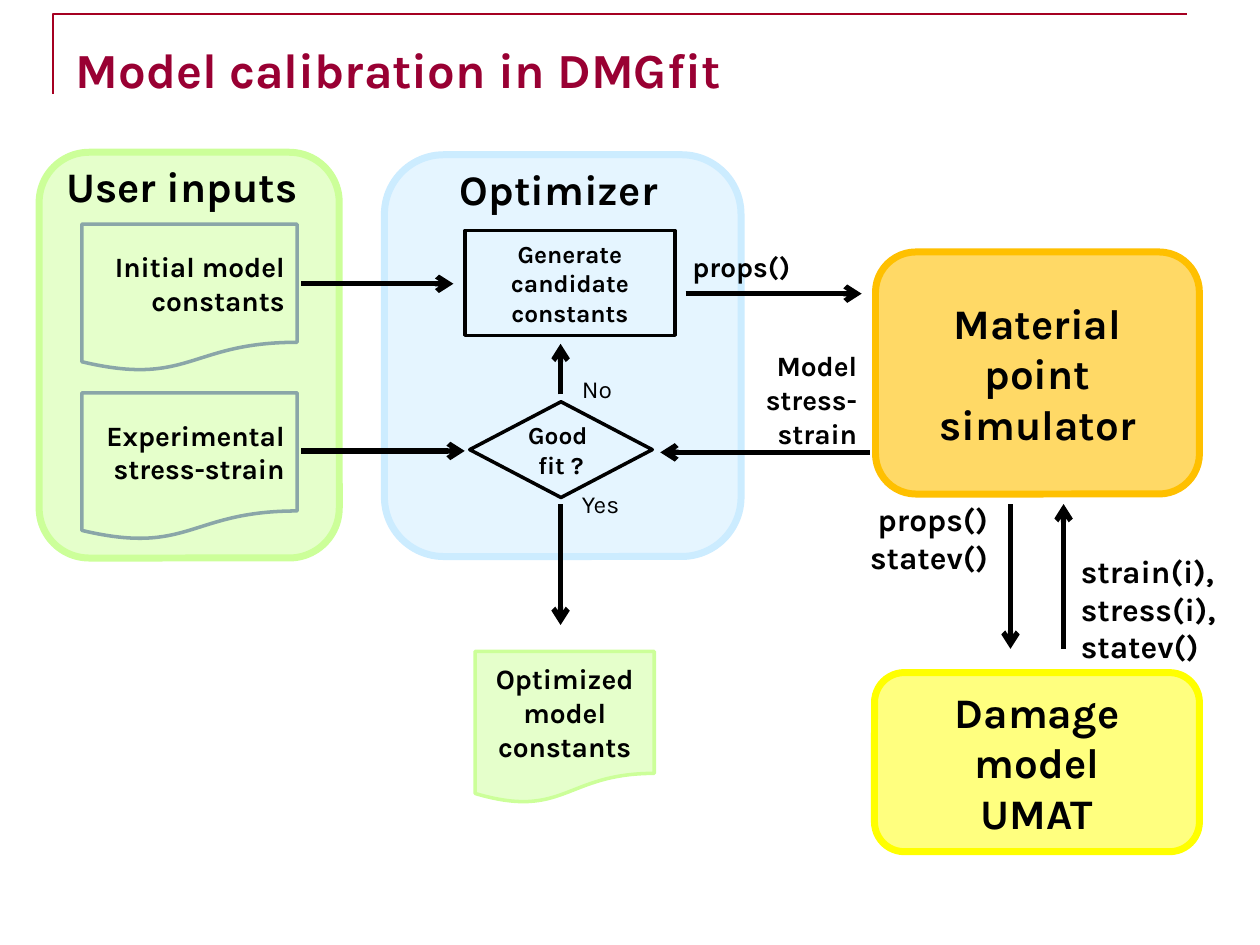
from dataclasses import dataclass

from lxml import etree
from pptx import Presentation
from pptx import util as u
from pptx.dml import color
from pptx.enum import shapes, text
from pptx.oxml import ns

FONT = "Karla"
BLACK = "000000"
GREEN = "CCFF99"
BLUE = "CCECFF"
YELLOW = "FFFF00"
ORANGE = "FFC000"
GRAY = "8AA6A8"
LEFT, CENTER, RIGHT = text.PP_ALIGN.LEFT, text.PP_ALIGN.CENTER, text.PP_ALIGN.RIGHT
Kind = shapes.MSO_SHAPE


@dataclass
class Node:
    kind: Kind
    left: float
    top: float
    width: float
    height: float
    line: str
    line_width: float
    lines: tuple[str, ...] = ()
    size: int = 16
    align: text.PP_ALIGN = CENTER
    fill: str = ""
    opacity: int = 50


@dataclass
class Label:
    left: float
    top: float
    width: float
    height: float
    lines: tuple[str, ...]
    size: int
    align: text.PP_ALIGN = LEFT
    bold: bool = True
    wrap: bool = True


@dataclass
class Arrow:
    start: tuple[float, float]
    end: tuple[float, float]


NODES = [
    Node(Kind.ROUNDED_RECTANGLE, 0.79, 3.07, 6.05, 8.18, GREEN, 4, fill=GREEN),
    Node(Kind.ROUNDED_RECTANGLE, 7.75, 3.12, 7.19, 8.1, BLUE, 4, fill=BLUE),
    Node(Kind.FLOWCHART_DOCUMENT, 9.58, 13.13, 3.61, 3.07, GREEN, 2,
         ("Optimized", "model constants"), fill=GREEN),
    Node(Kind.FLOWCHART_DECISION, 9.47, 8.1, 3.68, 1.93, BLACK, 2,
         ("Good ", "fit ?"), 14),
    Node(Kind.FLOWCHART_PROCESS, 9.37, 4.65, 4.24, 2.11, BLACK, 2,
         ("Generate candidate constants",), 14),
    Node(Kind.ROUNDED_RECTANGLE, 17.63, 13.56, 6.55, 3.61, YELLOW, 4,
         ("Damage model", "UMAT"), 24, fill=YELLOW),
    Node(Kind.ROUNDED_RECTANGLE, 17.65, 5.08, 6.53, 4.88, ORANGE, 4,
         ("Material point simulator",), 24, fill=ORANGE, opacity=60),
    Node(Kind.FLOWCHART_DOCUMENT, 1.65, 7.92, 4.34, 2.97, GRAY, 2,
         ("Experimental stress-strain",), align=RIGHT),
    Node(Kind.FLOWCHART_DOCUMENT, 1.65, 4.52, 4.34, 2.97, GRAY, 2,
         ("Initial model constants",), align=RIGHT),
]

LABELS = [
    Label(1.09, 3.12, 5.41, 1.27, ("User inputs",), 24, wrap=False),
    Label(9.02, 3.18, 4.72, 1.27, ("Optimizer",), 24, wrap=False),
    Label(11.48, 9.73, 1.27, 0.86, ("Yes",), 14, bold=False, wrap=False),
    Label(11.48, 7.42, 1.14, 0.84, ("No",), 14, bold=False, wrap=False),
    Label(21.54, 11, 3.53, 2.57, ("strain(i), stress(i),", "statev()"), 18),
    Label(16.99, 9.96, 3.18, 1.8, ("props()", "statev()"), 18, RIGHT),
    Label(14.81, 6.91, 2.72, 2.39, ("Model stress-", "strain"), 16, RIGHT),
    Label(13.41, 4.9, 2.77, 0.94, ("props()",), 16, RIGHT),
]

ARROWS = [
    Arrow((11.3, 10.16), (11.3, 12.6)),
    Arrow((11.3, 7.95), (11.3, 6.93)),
    Arrow((21.44, 13.08), (21.44, 10.16)),
    Arrow((20.37, 10.16), (20.37, 13.08)),
    Arrow((17.53, 9.12), (13.31, 9.12)),
    Arrow((13.82, 5.92), (17.37, 5.92)),
    Arrow((6.07, 5.72), (9.14, 5.72)),
    Arrow((6.07, 9.09), (9.37, 9.09)),
]


def set_color(target, value: str) -> None:
    target.rgb = color.RGBColor.from_string(value)


def set_line(line, value: str, width: float) -> None:
    set_color(line.color, value)
    line.width = u.Pt(width)


def write_lines(frame, lines: tuple[str, ...], size: int, align: text.PP_ALIGN,
                bold: bool = True, ink: str = BLACK) -> None:
    for index, line in enumerate(lines):
        paragraph = frame.add_paragraph() if index else frame.paragraphs[0]
        paragraph.alignment = align
        run = paragraph.add_run()
        run.text = line
        run.font.name = FONT
        run.font.size = u.Pt(size)
        run.font.bold = bold
        set_color(run.font.color, ink)


def draw_node(slide, node: Node) -> None:
    shape = slide.shapes.add_shape(node.kind, u.Cm(node.left), u.Cm(node.top),
                                   u.Cm(node.width), u.Cm(node.height))
    shape.shadow.inherit = False
    set_line(shape.line, node.line, node.line_width)
    if node.fill:
        shape.fill.solid()
        set_color(shape.fill.fore_color, node.fill)
        rgb = shape.fill._xPr.find(".//" + ns.qn("a:srgbClr"))
        etree.SubElement(rgb, ns.qn("a:alpha"), val=str(node.opacity * 1000))
    else:
        shape.fill.background()
    shape.text_frame.word_wrap = True
    shape.text_frame.vertical_anchor = text.MSO_ANCHOR.MIDDLE
    write_lines(shape.text_frame, node.lines, node.size, node.align)


def draw_label(slide, label: Label) -> None:
    shape = slide.shapes.add_textbox(u.Cm(label.left), u.Cm(label.top),
                                     u.Cm(label.width), u.Cm(label.height))
    shape.text_frame.word_wrap = label.wrap
    shape.text_frame.auto_size = text.MSO_AUTO_SIZE.SHAPE_TO_FIT_TEXT
    write_lines(shape.text_frame, label.lines, label.size, label.align, label.bold)


def draw_arrow(slide, arrow: Arrow) -> None:
    connector = slide.shapes.add_connector(
        shapes.MSO_CONNECTOR.STRAIGHT,
        *(u.Cm(value) for value in arrow.start + arrow.end))
    set_line(connector.line, BLACK, 3)
    properties = connector._element.spPr
    etree.SubElement(properties.find(ns.qn("a:ln")), ns.qn("a:tailEnd"), type="arrow")
    etree.SubElement(properties, ns.qn("a:effectLst"))


def draw_title(slide) -> None:
    builder = slide.shapes.build_freeform(u.Cm(1.07), u.Cm(1.9))
    builder.add_line_segments(
        [(u.Cm(1.07), u.Cm(0.28)), (u.Cm(23.93), u.Cm(0.28))], close=False)
    rule = builder.convert_to_shape()
    rule.shadow.inherit = False
    rule.fill.background()
    set_line(rule.line, "A50021", 1.5)

    title = slide.shapes.title
    title.left, title.top = u.Cm(1.27), u.Cm(0.56)
    title.width, title.height = u.Cm(22.86), u.Cm(1.65)
    title.text_frame.auto_size = text.MSO_AUTO_SIZE.NONE
    title.text_frame.vertical_anchor = text.MSO_ANCHOR.MIDDLE
    write_lines(title.text_frame, ("Model calibration in DMGfit",), 28, LEFT, ink="990033")


def main() -> None:
    presentation = Presentation()
    presentation.slide_width = u.Cm(25.4)
    presentation.slide_height = u.Cm(19.05)
    slide = presentation.slides.add_slide(presentation.slide_layouts[5])
    draw_title(slide)
    for node in NODES:
        draw_node(slide, node)
    for label in LABELS:
        draw_label(slide, label)
    for arrow in ARROWS:
        draw_arrow(slide, arrow)
    presentation.save("out.pptx")


if __name__ == "__main__":
    main()
